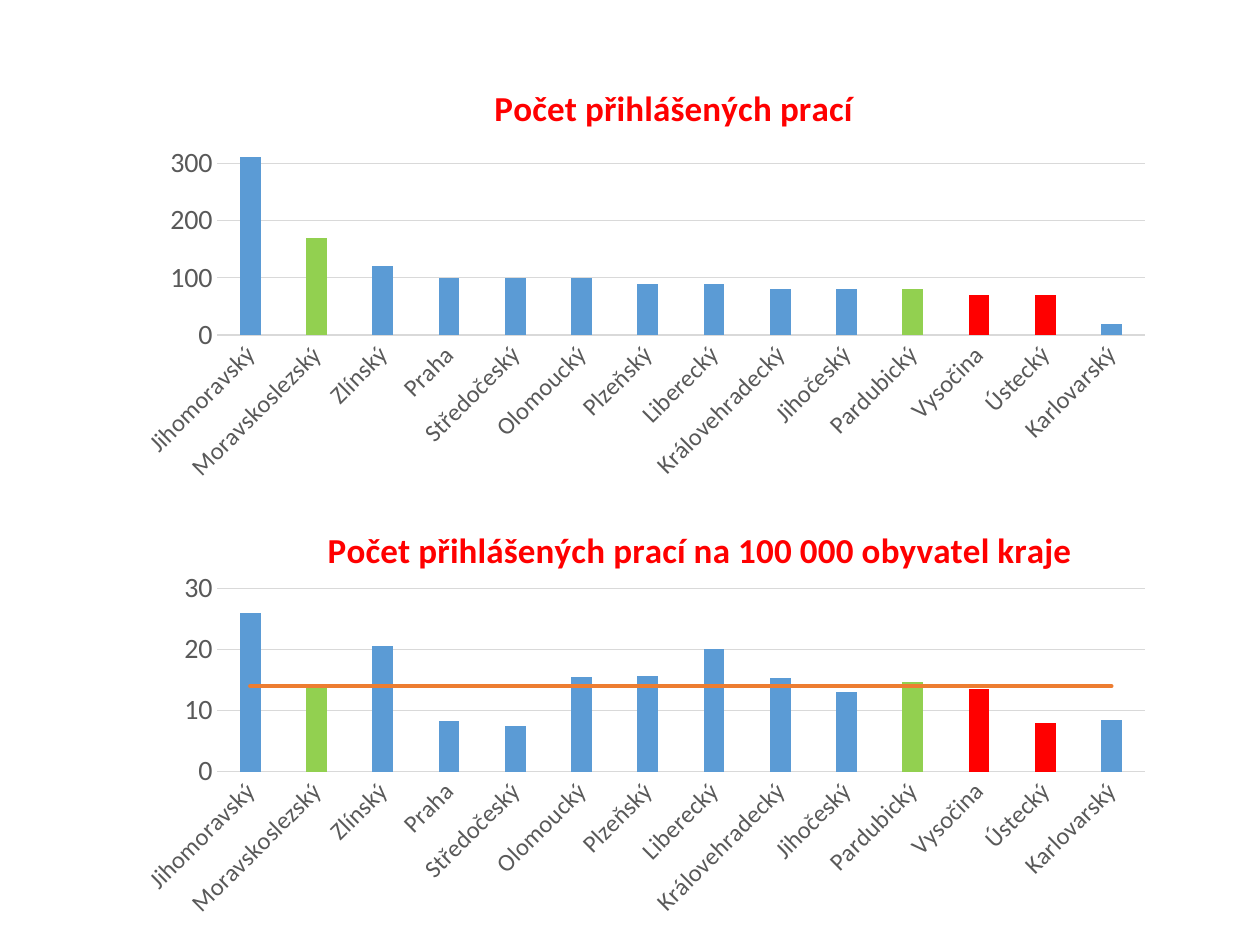
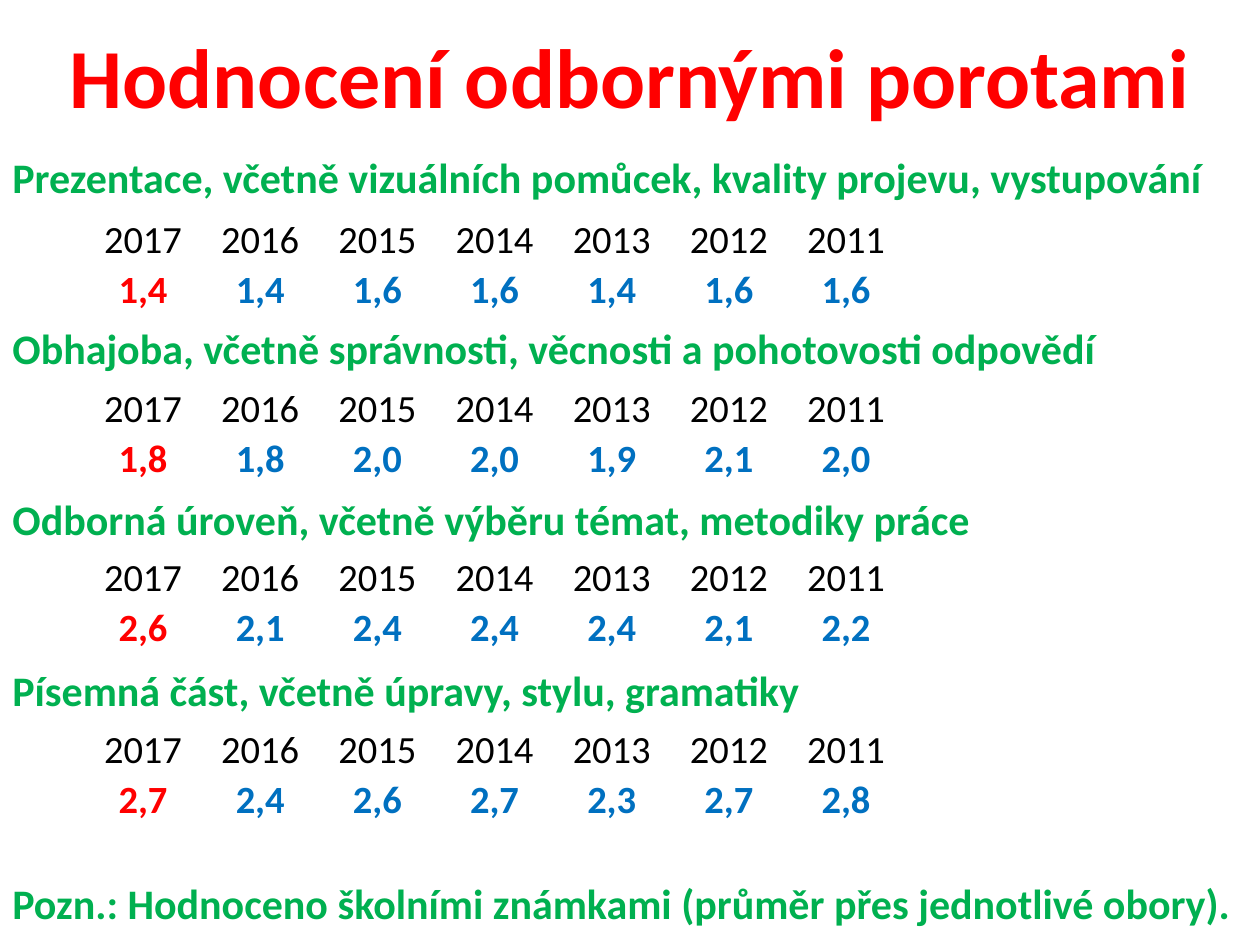
from lxml import etree
from pptx import Presentation
from pptx.chart.data import CategoryChartData
from pptx.dml.color import RGBColor
from pptx.enum.chart import XL_CHART_TYPE, XL_MARKER_STYLE, XL_TICK_MARK
from pptx.enum.text import MSO_ANCHOR, MSO_AUTO_SIZE, PP_ALIGN
from pptx.oxml.ns import qn
from pptx.util import Inches, Pt

COLUMN = XL_CHART_TYPE.COLUMN_CLUSTERED
NO_MARK, NO_TICK = XL_MARKER_STYLE.NONE, XL_TICK_MARK.NONE
MIDDLE, BOTTOM = MSO_ANCHOR.MIDDLE, MSO_ANCHOR.BOTTOM
CENTER, NO_FIT = PP_ALIGN.CENTER, MSO_AUTO_SIZE.NONE

FONT = "Calibri"
RED, GREEN, BLUE, BLACK = "FF0000", "00B050", "0070C0", "000000"
BAR, LIME, ORANGE, GRID, GRAY = "5B9BD5", "92D050", "ED7D31", "D9D9D9", "595959"

# Content: regional charts
REGIONS = ["Jihomoravský", "Moravskoslezský", "Zlínský", "Praha", "Středočeský",
           "Olomoucký", "Plzeňský", "Liberecký", "Královehradecký", "Jihočeský",
           "Pardubický", "Vysočina", "Ústecký", "Karlovarský"]
MARKED = {"Moravskoslezský": LIME, "Pardubický": LIME,
          "Vysočina": RED, "Ústecký": RED}
CHARTS = [
    dict(title="Počet přihlášených prací", top=0.36, height=3.54,
         vals=[310, 170, 120, 100, 100, 100, 90, 90, 80, 80, 80, 70, 70, 20],
         mean=None, peak=350, step=100, lap=-27, format="General",
         head=(0.35, 0.07), plot=(0.09, 0.2, 0.89, 0.45)),
    dict(title="Počet přihlášených prací na 100 000 obyvatel kraje",
         top=3.91, height=3.46,
         vals=[26, 13.8, 20.6, 8.2, 7.5, 15.5, 15.6, 20, 15.4, 13, 14.7, 13.6, 8, 8.4],
         mean=14, peak=30, step=10, lap=0, format="0",
         head=(0.19, 0.06), plot=(0.09, 0.22, 0.89, 0.42)),
]

# Content: jury marks
TITLE = "Hodnocení odbornými porotami"
YEARS = ["2017", "2016", "2015", "2014", "2013", "2012", "2011"]
MARKS = [
    ("Prezentace, včetně vizuálních pomůcek, kvality projevu, vystupování",
     1.7, ["1,4", "1,4", "1,6", "1,6", "1,4", "1,6", "1,6"]),
    ("Obhajoba, včetně správnosti, věcnosti a pohotovosti odpovědí",
     3.04, ["1,8", "1,8", "2,0", "2,0", "1,9", "2,1", "2,0"]),
    ("Odborná úroveň, včetně výběru témat, metodiky práce",
     4.38, ["2,6", "2,1", "2,4", "2,4", "2,4", "2,1", "2,2"]),
    ("Písemná část, včetně úpravy, stylu, gramatiky",
     5.75, ["2,7", "2,4", "2,6", "2,7", "2,3", "2,7", "2,8"]),
]
NOTE = "Pozn.: Hodnoceno školními známkami (průměr přes jednotlivé obory)."
HEAD_GAP, NOTE_GAP = 69, 93


def rgb(code):
    return RGBColor.from_string(code)


def style(font, size, color, bold=False):
    font.name, font.size, font.bold = FONT, Pt(size), bold
    font.color.rgb = rgb(color)


def place(node, index, spot, inner=False):
    """Fix the place of a chart title or plot as shares of the chart."""
    for old in node.findall(qn("c:layout")):
        node.remove(old)
    layout = etree.Element(qn("c:layout"))
    manual = etree.SubElement(layout, qn("c:manualLayout"))
    rules = [("layoutTarget", "inner")] if inner else []
    rules += [("xMode", "edge"), ("yMode", "edge"), *zip("xywh", spot)]
    for name, val in rules:
        etree.SubElement(manual, qn("c:" + name)).set("val", str(val))
    node.insert(index, layout)


def draw_mean(chart):
    """Turn the second series into a line on the same axes."""
    bars = chart.plots[0]._element
    ser = bars.findall(qn("c:ser"))[1]
    for flag in ser.findall(qn("c:invertIfNegative")):
        ser.remove(flag)
    line = etree.Element(qn("c:lineChart"))
    etree.SubElement(line, qn("c:grouping")).set("val", "standard")
    etree.SubElement(line, qn("c:varyColors")).set("val", "0")
    line.append(ser)
    etree.SubElement(line, qn("c:marker")).set("val", "1")
    for axis in bars.findall(qn("c:axId")):
        etree.SubElement(line, qn("c:axId")).set("val", axis.get("val"))
    # Parsed again so that the chart knows it as a plot
    bars.addnext(parse_xml(etree.tostring(line)))
    mean = chart.plots[1].series[0]
    mean.smooth = False
    mean.marker.style = NO_MARK
    mean.format.line.color.rgb = rgb(ORANGE)
    mean.format.line.width = Pt(2.5)
    mean.format.line._ln.set("cap", "rnd")


def parse_xml(text):
    from pptx.oxml import parse_xml as read
    return read(text)


def rule(line):
    line.color.rgb, line.width = rgb(GRID), Pt(0.75)


def add_graph(slide, part):
    data = CategoryChartData()
    data.categories = REGIONS
    data.add_series("Series 1", part["vals"])
    if part["mean"]:
        data.add_series("Series 2", [part["mean"]] * len(REGIONS))
    chart = slide.shapes.add_chart(
        COLUMN, Inches(0.98), Inches(part["top"]), Inches(8.27),
        Inches(part["height"]), data).chart
    chart.has_legend = False
    style(chart.font, 10, BLACK)

    # Title and plot area
    frame = chart.chart_title.text_frame
    frame.text = part["title"]
    style(frame.paragraphs[0].font, 20, RED, True)
    place(chart.chart_title._element, 1, part["head"])
    place(chart._chartSpace.chart.plotArea, 0, part["plot"], True)

    # Axes
    cat, val = chart.category_axis, chart.value_axis
    for axis, size in ((cat, 14), (val, 16)):
        axis.major_tick_mark = axis.minor_tick_mark = NO_TICK
        style(axis.tick_labels.font, size, GRAY)
    cat._element.find(qn("c:txPr")).find(qn("a:bodyPr")).set("rot", "-2700000")
    rule(cat.format.line)
    rule(val.major_gridlines.format.line)
    val.format.line.fill.background()
    val.minimum_scale, val.maximum_scale = 0, part["peak"]
    val.major_unit = part["step"]
    val.tick_labels.number_format = part["format"]
    val.tick_labels.number_format_is_linked = False

    # Columns
    plot = chart.plots[0]
    plot.gap_width, plot.overlap, plot.vary_by_categories = 219, part["lap"], False
    bars = plot.series[0]
    for fill, color in [(bars.format.fill, BAR)] + [
            (bars.points[REGIONS.index(name)].format.fill, color)
            for name, color in MARKED.items()]:
        fill.solid()
        fill.fore_color.rgb = rgb(color)
    if part["mean"]:
        draw_mean(chart)


def add_marks(slide, top, marks):
    table = slide.shapes.add_table(2, len(YEARS), Inches(0.67), Inches(top),
                                   Inches(6.51), Inches(0.79)).table
    table.first_row = table.horz_banding = False
    for row, texts in enumerate((YEARS, marks)):
        for col, text in enumerate(texts):
            cell = table.cell(row, col)
            cell.fill.background()
            cell.vertical_anchor = BOTTOM
            cell.margin_left = cell.margin_right = cell.margin_top = Inches(0.01)
            cell.margin_bottom = 0
            cell.text = text
            para = cell.text_frame.paragraphs[0]
            para.alignment = CENTER
            color = BLACK if row == 0 else BLUE if col else RED
            style(para.font, 22, color, row == 1)


def add_title(slide):
    title = slide.shapes.title
    title.left, title.top = 0, Inches(0.14)
    title.width, title.height = Inches(10), Inches(0.91)
    frame = title.text_frame
    frame.text = TITLE
    frame.auto_size, frame.vertical_anchor = NO_FIT, MIDDLE
    frame.paragraphs[0].alignment = CENTER
    style(frame.paragraphs[0].font, 48, RED, True)


def add_heads(slide):
    frame = slide.shapes.add_textbox(0, Inches(1.15), Inches(10),
                                     Inches(6.3)).text_frame
    frame.word_wrap = True
    frame.text = "\n".join([head for head, _, _ in MARKS] + [NOTE])
    gaps = [0] + [HEAD_GAP] * (len(MARKS) - 1) + [NOTE_GAP]
    for para, gap in zip(frame.paragraphs, gaps):
        para.space_before = Pt(gap)
        style(para.font, 24, GREEN, True)


def main():
    deck = Presentation()
    deck.slide_width, deck.slide_height = Inches(10), Inches(7.5)

    # Works by region
    slide = deck.slides.add_slide(deck.slide_layouts[6])
    for part in CHARTS:
        add_graph(slide, part)

    # Marks by jury
    slide = deck.slides.add_slide(deck.slide_layouts[5])
    add_title(slide)
    add_heads(slide)
    for _, top, marks in MARKS:
        add_marks(slide, top, marks)

    deck.save("out.pptx")


if __name__ == "__main__":
    main()
